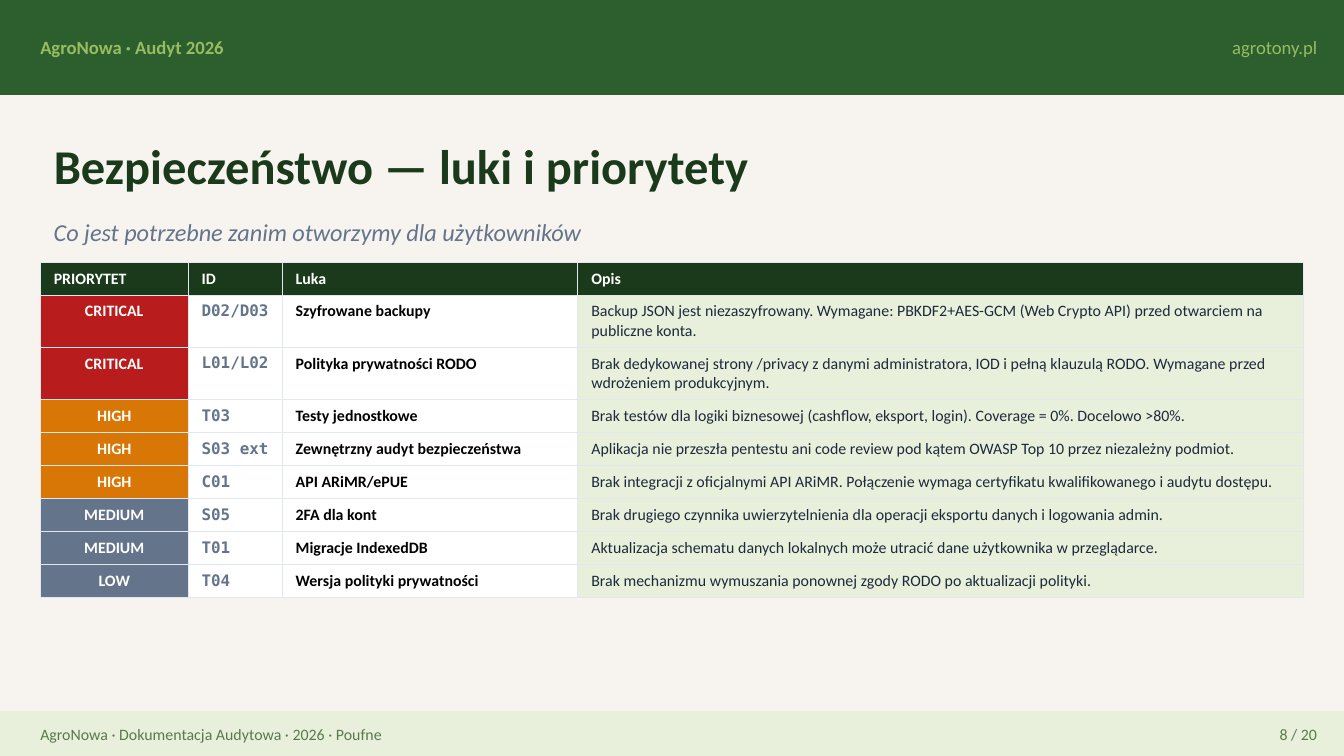
import pptx
import pptx.dml.color
import pptx.enum.shapes
import pptx.enum.text
import pptx.oxml
import pptx.oxml.ns
import pptx.util

RGB = pptx.dml.color.RGBColor
ALIGN = pptx.enum.text.PP_ALIGN
PX = 4572  # 200 px to the inch

FOREST = RGB(0x2C, 0x5F, 0x2D)
DARK_GREEN = RGB(0x1A, 0x3A, 0x1B)
LIME = RGB(0x97, 0xBC, 0x62)
PALE_GREEN = RGB(0xE8, 0xF0, 0xDC)
MOSS = RGB(0x5A, 0x7A, 0x4A)
CREAM = RGB(0xF7, 0xF4, 0xEF)
SLATE = RGB(0x64, 0x74, 0x8B)
INK = RGB(0x1E, 0x29, 0x3B)
RED = RGB(0xB9, 0x1C, 0x1C)
ORANGE = RGB(0xD9, 0x77, 0x06)
WHITE = RGB(0xFF, 0xFF, 0xFF)
BLACK = RGB(0, 0, 0)
GRID = RGB(0xE2, 0xE8, 0xF0)

SANS = "Calibri"
MONO = "DejaVu Sans Mono"


def write(frame, text, size, color, bold=False, italic=False, font=SANS, align=ALIGN.LEFT):
    paragraph = frame.paragraphs[0]
    paragraph.alignment = align
    run = paragraph.add_run()
    run.text = text
    run.font.name = font
    run.font.size = pptx.util.Pt(size)
    run.font.bold = bold
    run.font.italic = italic
    run.font.color.rgb = color


def set_borders(cell):
    properties = cell._tc.get_or_add_tcPr()
    for side in ("lnL", "lnR", "lnT", "lnB"):
        properties.append(pptx.oxml.parse_xml(
            f'<a:{side} {pptx.oxml.ns.nsdecls("a")} w="6350"><a:solidFill>'
            f'<a:srgbClr val="{GRID}"/></a:solidFill></a:{side}>'))


deck = pptx.Presentation()
deck.slide_width = 2000 * PX
deck.slide_height = 1125 * PX
slide = deck.slides.add_slide(deck.slide_layouts[5])
slide.background.fill.solid()
slide.background.fill.fore_color.rgb = CREAM

# Header and footer bands
for top, height, color in ((0, 140, FOREST), (1060, 65, PALE_GREEN)):
    band = slide.shapes.add_shape(
        pptx.enum.shapes.MSO_SHAPE.RECTANGLE, 0, top * PX, 2000 * PX, height * PX)
    band.shadow.inherit = False
    band.fill.solid()
    band.fill.fore_color.rgb = color
    band.line.color.rgb = color
    band.line.width = pptx.util.Pt(1)

# Title, subtitle and the texts on the bands
title = slide.shapes.title
title.left, title.top, title.width, title.height = 80 * PX, 170 * PX, 1840 * PX, 150 * PX
lines = [(title, "Bezpieczeństwo — luki i priorytety", 26, DARK_GREEN, True, False, ALIGN.LEFT)]
for left, top, width, height, *content in (
    (60, 0, 1000, 140, "AgroNowa · Audyt 2026", 10, LIME, True, False, ALIGN.LEFT),
    (1400, 0, 560, 140, "agrotony.pl", 10, LIME, False, False, ALIGN.RIGHT),
    (80, 310, 1840, 70, "Co jest potrzebne zanim otworzymy dla użytkowników",
     13, SLATE, False, True, ALIGN.LEFT),
    (60, 1060, 1400, 65, "AgroNowa · Dokumentacja Audytowa · 2026 · Poufne",
     8.5, MOSS, False, False, ALIGN.LEFT),
    (1700, 1060, 260, 65, "8 / 20", 8.5, MOSS, False, False, ALIGN.RIGHT),
):
    box = slide.shapes.add_textbox(left * PX, top * PX, width * PX, height * PX)
    lines.append((box, *content))

for holder, text, size, color, bold, italic, align in lines:
    frame = holder.text_frame
    frame.word_wrap = True
    frame.auto_size = pptx.enum.text.MSO_AUTO_SIZE.NONE
    frame.vertical_anchor = pptx.enum.text.MSO_ANCHOR.MIDDLE
    frame.margin_left = frame.margin_right = frame.margin_top = frame.margin_bottom = 0
    write(frame, text, size, color, bold, italic, align=align)

# Table of gaps
PRIORITY_FILLS = {"CRITICAL": RED, "HIGH": ORANGE, "MEDIUM": SLATE, "LOW": SLATE}
HEADINGS = ("PRIORYTET", "ID", "Luka", "Opis")
GAPS = (
    ("CRITICAL", "D02/D03", "Szyfrowane backupy",
     "Backup JSON jest niezaszyfrowany. Wymagane: PBKDF2+AES-GCM (Web Crypto API) "
     "przed otwarciem na publiczne konta."),
    ("CRITICAL", "L01/L02", "Polityka prywatności RODO",
     "Brak dedykowanej strony /privacy z danymi administratora, IOD i pełną klauzulą RODO. "
     "Wymagane przed wdrożeniem produkcyjnym."),
    ("HIGH", "T03", "Testy jednostkowe",
     "Brak testów dla logiki biznesowej (cashflow, eksport, login). "
     "Coverage = 0%. Docelowo >80%."),
    ("HIGH", "S03 ext", "Zewnętrzny audyt bezpieczeństwa",
     "Aplikacja nie przeszła pentestu ani code review pod kątem OWASP Top 10 "
     "przez niezależny podmiot."),
    ("HIGH", "C01", "API ARiMR/ePUE",
     "Brak integracji z oficjalnymi API ARiMR. Połączenie wymaga certyfikatu "
     "kwalifikowanego i audytu dostępu."),
    ("MEDIUM", "S05", "2FA dla kont",
     "Brak drugiego czynnika uwierzytelnienia dla operacji eksportu danych i logowania admin."),
    ("MEDIUM", "T01", "Migracje IndexedDB",
     "Aktualizacja schematu danych lokalnych może utracić dane użytkownika w przeglądarce."),
    ("LOW", "T04", "Wersja polityki prywatności",
     "Brak mechanizmu wymuszania ponownej zgody RODO po aktualizacji polityki."),
)
COLUMN_WIDTHS = (220, 140, 440, 1080)
ROW_HEIGHTS = [49, 78, 78] + [49] * 6

gap_table = slide.shapes.add_table(
    len(ROW_HEIGHTS), len(COLUMN_WIDTHS), 60 * PX, 390 * PX,
    sum(COLUMN_WIDTHS) * PX, sum(ROW_HEIGHTS) * PX).table
gap_table.horz_banding = False
for column, width in zip(gap_table.columns, COLUMN_WIDTHS):
    column.width = width * PX
for row, height in zip(gap_table.rows, ROW_HEIGHTS):
    row.height = height * PX

for row, texts in zip(gap_table.rows, (HEADINGS, *GAPS)):
    if texts is HEADINGS:
        styles = [(DARK_GREEN, WHITE, True, SANS, ALIGN.LEFT)] * len(HEADINGS)
    else:
        styles = (
            (PRIORITY_FILLS[texts[0]], WHITE, True, SANS, ALIGN.CENTER),
            (WHITE, SLATE, True, MONO, ALIGN.LEFT),
            (WHITE, BLACK, True, SANS, ALIGN.LEFT),
            (PALE_GREEN, INK, False, SANS, ALIGN.LEFT),
        )
    for cell, text, (fill, color, bold, font, align) in zip(row.cells, texts, styles):
        set_borders(cell)
        cell.fill.solid()
        cell.fill.fore_color.rgb = fill
        write(cell.text_frame, text, 8.5, color, bold, font=font, align=align)

deck.save("out.pptx")
